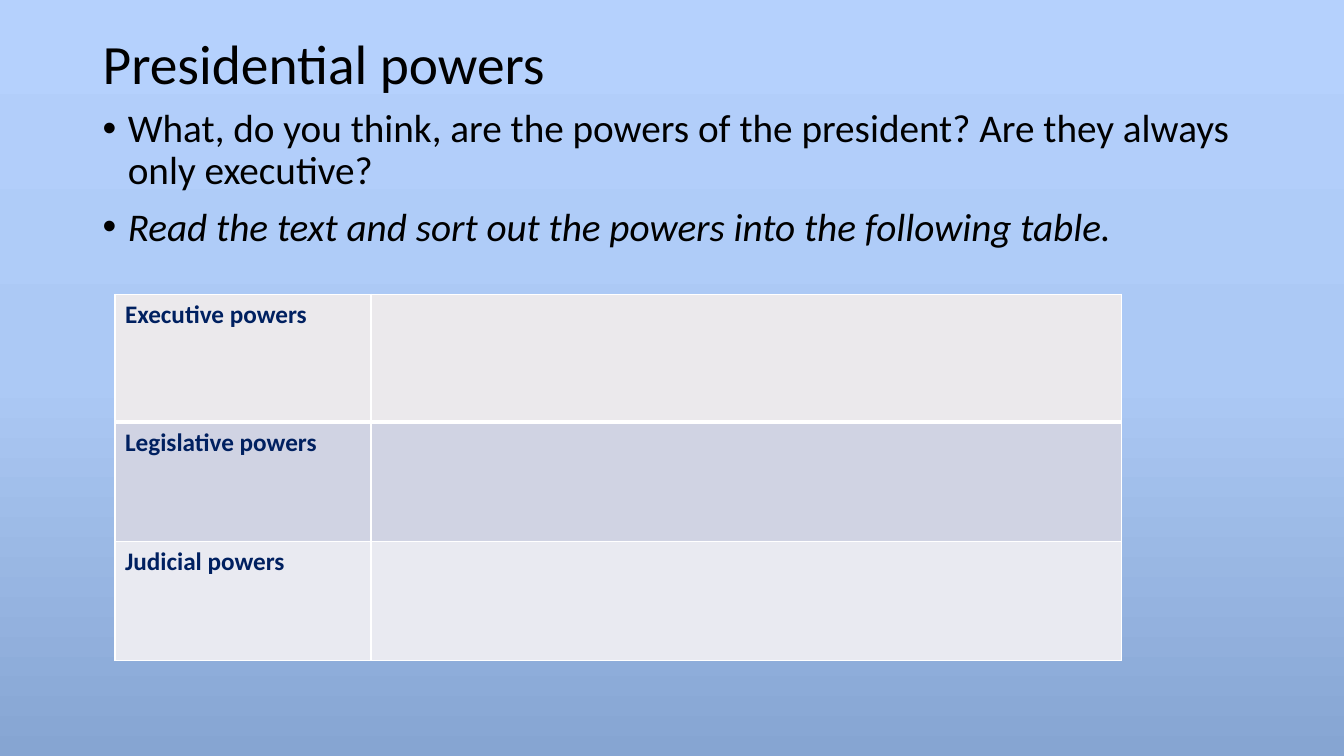
import copy

import pptx
import pptx.dml.color
import pptx.enum.dml
import pptx.enum.text
import pptx.oxml
import pptx.oxml.ns
import pptx.util
from lxml import etree

Inches, Pt = pptx.util.Inches, pptx.util.Pt
qn = pptx.oxml.ns.qn

TITLE = "Presidential powers"
POINTS = [
    ("What, do you think, are the powers of the president? "
     "Are they always only executive?", False),
    ("Read the text and sort out the powers into the following table.", True),
]
# label, row height, fill
ROWS = [
    ("Executive powers", 1.27, "EBE9EC"),
    ("Legislative powers", 1.18, "D0D3E3"),
    ("Judicial powers", 1.18, "E9EAF1"),
]
COLS = [2.54, 7.44]
SIZE = (13.33, 7.5)
BOXES = {
    "title": (0.92, 0.4, 11.5, 0.51),
    "body": (0.92, 1.03, 11.5, 5.73),
}
TABLE = (1.14, 2.92)
THEME = {
    "font": "Calibri", "ink": "000000", "label": "002060", "rule": "FFFFFF",
    "sky": [(0, "B5D1FD"), (0.5, "ACC9F5"), (1, "86A5D2")],
    "title": 39.6, "body": 28, "cell": 18, "thin": 1, "thick": 3,
}


def rgb(code):
    return pptx.dml.color.RGBColor.from_string(code)


def apply(item, form):
    for name, value in form.items():
        setattr(item, name, value)


def write(para, text, size, color, **form):
    run = para.add_run()
    run.text = text
    apply(run.font, {"name": THEME["font"], "size": Pt(size), **form})
    run.font.color.rgb = rgb(color)


def add_box(slide, name, anchor):
    box = slide.shapes.add_textbox(*map(Inches, BOXES[name]))
    apply(box.text_frame, {"word_wrap": True, "vertical_anchor": anchor})
    return box.text_frame


def add_dot(para):
    """Give a paragraph a round bullet and a hanging indent."""
    props = para._p.get_or_add_pPr()
    props.set("marL", str(Inches(0.25)))
    props.set("indent", str(-Inches(0.25)))
    etree.SubElement(props, qn("a:buFont"), typeface="Arial")
    etree.SubElement(props, qn("a:buChar"), char="•")


def rule_cell(cell, top, base):
    props = cell._tc.get_or_add_tcPr()
    sides = {"L": THEME["thin"], "R": THEME["thin"], "T": top, "B": base}
    for side, width in sides.items():
        line = etree.SubElement(props, qn("a:ln" + side), w=str(Pt(width)))
        fill = etree.SubElement(line, qn("a:solidFill"))
        etree.SubElement(fill, qn("a:srgbClr"), val=THEME["rule"])


def paint_sky(slide):
    fill = slide.background.fill
    fill.gradient()
    fill.gradient_angle = 270
    first = fill.gradient_stops[0]._gs
    first.addnext(copy.deepcopy(first))
    for stop, (place, color) in zip(fill.gradient_stops, THEME["sky"]):
        stop.position = place
        stop.color.rgb = rgb(color)


def add_text(slide):
    anchors = pptx.enum.text.MSO_ANCHOR
    para = add_box(slide, "title", anchors.MIDDLE).paragraphs[0]
    para.line_spacing = 0.9
    write(para, TITLE, THEME["title"], THEME["ink"])

    frame = add_box(slide, "body", anchors.TOP)
    for i, (text, slant) in enumerate(POINTS):
        para = frame.add_paragraph() if i else frame.paragraphs[0]
        apply(para, {"line_spacing": 0.9, "space_before": Pt(10)})
        add_dot(para)
        write(para, text, THEME["body"], THEME["ink"], italic=slant)


def add_grid(slide):
    high = sum(row[1] for row in ROWS)
    spot = map(Inches, (*TABLE, sum(COLS), high))
    grid = slide.shapes.add_table(len(ROWS), len(COLS), *spot).table
    for col, width in zip(grid.columns, COLS):
        col.width = Inches(width)
    thin, thick = THEME["thin"], THEME["thick"]
    for i, (label, height, color) in enumerate(ROWS):
        grid.rows[i].height = Inches(height)
        for cell in grid.rows[i].cells:
            rule_cell(cell, thick if i == 1 else thin,
                      thick if i == 0 else thin)
            cell.fill.solid()
            cell.fill.fore_color.rgb = rgb(color)
        write(grid.cell(i, 0).text_frame.paragraphs[0], label,
              THEME["cell"], THEME["label"], bold=True)


def main():
    deck = pptx.Presentation()
    deck.slide_width, deck.slide_height = map(Inches, SIZE)
    slide = deck.slides.add_slide(deck.slide_layouts[6])
    paint_sky(slide)
    add_text(slide)
    add_grid(slide)
    deck.save("out.pptx")


if __name__ == "__main__":
    main()
